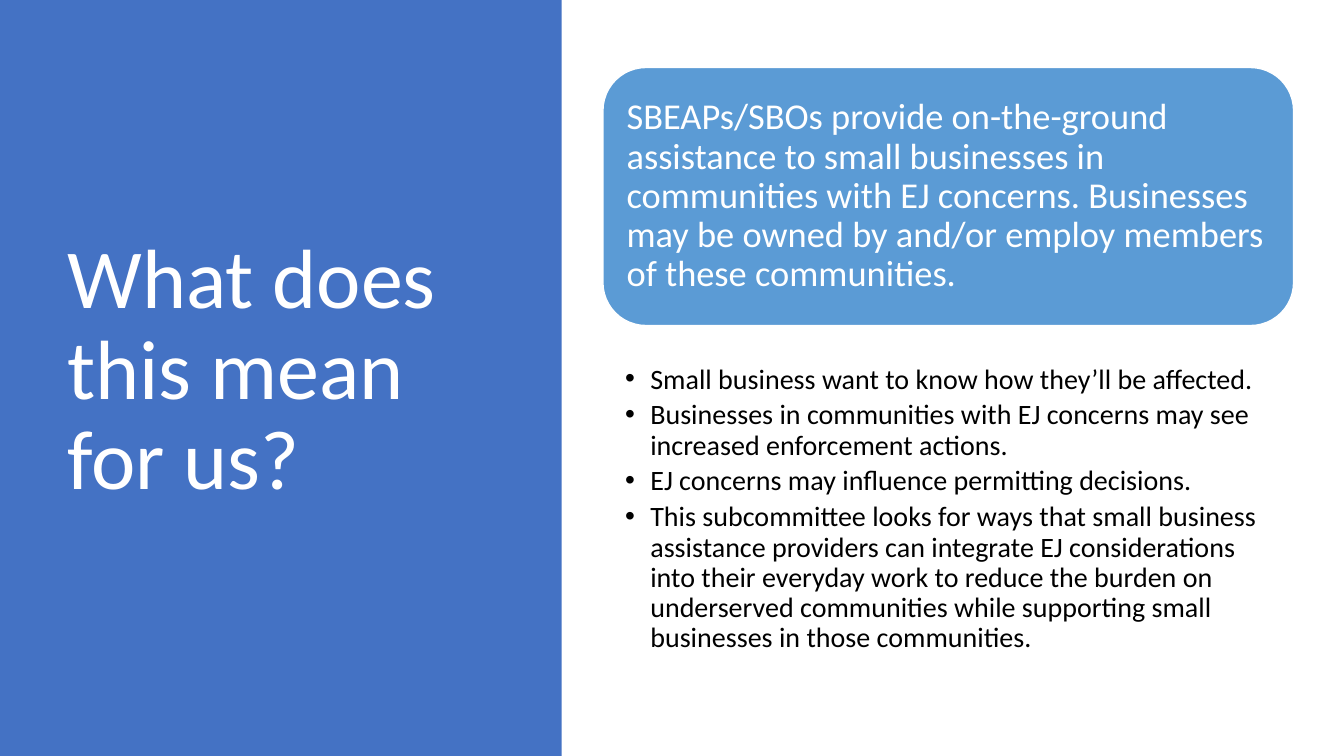
from dataclasses import dataclass

from lxml.etree import SubElement
from pptx import Presentation
from pptx.dml.color import RGBColor
from pptx.enum.shapes import MSO_SHAPE
from pptx.enum.text import MSO_ANCHOR, PP_ALIGN
from pptx.oxml.ns import qn
from pptx.shapes.autoshape import Shape
from pptx.slide import Slide
from pptx.util import Inches, Pt

WHITE = RGBColor(0xFF, 0xFF, 0xFF)
BLACK = RGBColor(0x00, 0x00, 0x00)
PANEL_BLUE = RGBColor(0x44, 0x72, 0xC4)
CARD_BLUE = RGBColor(0x5B, 0x9B, 0xD5)
FONT = "Calibri"

TITLE = "What does this mean for us?"
CARD_TEXT = (
    "SBEAPs/SBOs provide on-the-ground assistance to small businesses in "
    "communities with EJ concerns. Businesses may be owned by and/or employ "
    "members of these communities."
)
POINTS = [
    "Small business want to know how they’ll be affected.",
    "Businesses in communities with EJ concerns may see increased enforcement actions.",
    "EJ concerns may influence permitting decisions.",
    "This subcommittee looks for ways that small business assistance providers can "
    "integrate EJ considerations into their everyday work to reduce the burden on "
    "underserved communities while supporting small businesses in those communities.",
]


@dataclass(frozen=True)
class Area:
    left: float
    top: float
    width: float
    height: float

    def lengths(self) -> list[Inches]:
        return [Inches(n) for n in (self.left, self.top, self.width, self.height)]


def add_block(page: Slide, area: Area, preset: MSO_SHAPE, fill: RGBColor,
              line: RGBColor | None = None) -> Shape:
    block = page.shapes.add_shape(preset, *area.lengths())
    block.shadow.inherit = False
    block.fill.solid()
    block.fill.fore_color.rgb = fill
    if line is None:
        block.line.fill.background()
    else:
        block.line.color.rgb = line
        block.line.width = Pt(1)
    return block


def write_text(box: Shape, texts: list[str], *, size: float, color: RGBColor,
               insets: tuple[float, float, float, float],
               anchor: MSO_ANCHOR = MSO_ANCHOR.MIDDLE,
               space_after: float = 0, bullet_indent: float = 0) -> None:
    """Insets are left, top, right and bottom, in inches."""
    frame = box.text_frame
    frame.word_wrap = True
    frame.vertical_anchor = anchor
    (frame.margin_left, frame.margin_top,
     frame.margin_right, frame.margin_bottom) = map(Inches, insets)
    for index, text in enumerate(texts):
        para = frame.add_paragraph() if index else frame.paragraphs[0]
        para.alignment = PP_ALIGN.LEFT
        para.line_spacing = 0.9
        para.space_after = Pt(space_after)
        if bullet_indent:
            properties = para._p.get_or_add_pPr()
            properties.set("marL", str(Inches(bullet_indent)))
            properties.set("indent", str(-Inches(bullet_indent)))
            SubElement(properties, qn("a:buFont"), typeface="Arial")
            SubElement(properties, qn("a:buChar"), char="•")
        span = para.add_run()
        span.text = text
        span.font.name = FONT
        span.font.size = Pt(size)
        span.font.color.rgb = color


def main() -> None:
    deck = Presentation()
    deck.slide_width, deck.slide_height = Inches(13.33), Inches(7.5)
    page = deck.slides.add_slide(deck.slide_layouts[6])

    # Left panel with the title
    add_block(page, Area(0, 0, 5.57, 7.5), MSO_SHAPE.RECTANGLE, PANEL_BLUE)
    title = page.shapes.add_textbox(*Area(0.57, 0.68, 4.16, 6.02).lengths())
    write_text(title, [TITLE], size=60, color=WHITE, insets=(0.1, 0.05, 0.1, 0.05))

    # Key message
    card = add_block(page, Area(5.98, 0.67, 6.85, 2.56),
                     MSO_SHAPE.ROUNDED_RECTANGLE, CARD_BLUE, line=WHITE)
    write_text(card, [CARD_TEXT], size=26, color=WHITE, insets=(0.11,) * 4)

    # Supporting points
    points = page.shapes.add_textbox(*Area(5.98, 3.58, 6.85, 3.3).lengths())
    write_text(points, POINTS, size=20, color=BLACK, insets=(0.22, 0.04, 0.2, 0.04),
               anchor=MSO_ANCHOR.TOP, space_after=4, bullet_indent=0.25)

    deck.save("out.pptx")


if __name__ == "__main__":
    main()
